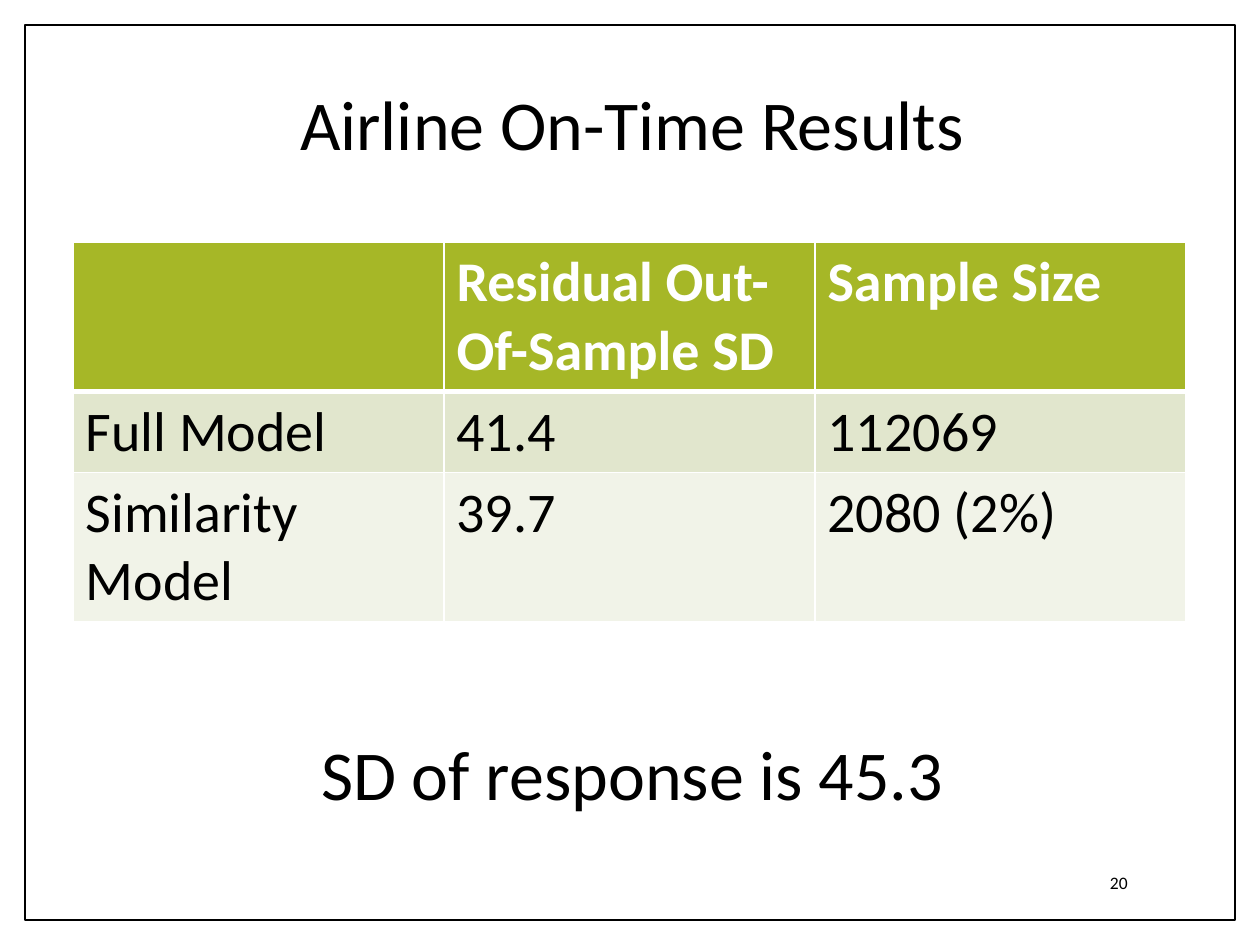
from lxml import etree
from pptx import Presentation
from pptx import util as u
from pptx.dml.color import RGBColor
from pptx.enum import shapes, text
from pptx.oxml.ns import qn

PX = 914400 / 126
FONT = "Calibri"
COLORS = {
    "white": "FFFFFF",
    "black": "000000",
    "header": "A6B727",
    "band_dark": "E1E6CD",
    "band_light": "F1F3E8",
}
RESULTS = [
    ["", "Residual Out-Of-Sample SD", "Sample Size"],
    ["Full Model", "41.4", "112069"],
    ["Similarity Model", "39.7", "2080 (2%)"],
]


def px(length):
    return u.Emu(round(length * PX))


def emu_box(box):
    return [px(length) for length in box]


def color(name):
    return RGBColor.from_string(COLORS[name])


def style(paragraph, size, color_name="black", bold=False):
    font = paragraph.font
    font.name, font.size, font.bold = FONT, u.Pt(size), bold
    font.color.rgb = color(color_name)


def add_frame(slide, box):
    frame = slide.shapes.add_shape(shapes.MSO_SHAPE.RECTANGLE, *emu_box(box))
    frame.shadow.inherit = False
    frame.fill.solid()
    frame.fill.fore_color.rgb = color("white")
    frame.line.color.rgb = color("black")
    frame.line.width = u.Pt(1)


def set_borders(cell, bottom_width):
    """Draw white cell borders; they must come before the fill in tcPr."""
    properties = cell._tc.get_or_add_tcPr()
    widths = {"lnL": 1, "lnR": 1, "lnT": 1, "lnB": bottom_width}
    for index, (side, width) in enumerate(widths.items()):
        line = etree.Element(qn(f"a:{side}"), w=str(u.Pt(width)))
        fill = etree.SubElement(line, qn("a:solidFill"))
        etree.SubElement(fill, qn("a:srgbClr"), val=COLORS["white"])
        properties.insert(index, line)


def add_results_table(slide, box):
    left, top, width, height = box
    row_heights = [149, 81, height - 149 - 81]
    fills = ["header", "band_dark", "band_light"]
    table = slide.shapes.add_table(len(RESULTS), len(RESULTS[0]), *emu_box(box)).table
    for column in table.columns:
        column.width = px(width / len(RESULTS[0]))
    for row_index, values in enumerate(RESULTS):
        is_header = row_index == 0
        table.rows[row_index].height = px(row_heights[row_index])
        for column_index, value in enumerate(values):
            cell = table.cell(row_index, column_index)
            cell.text = value
            cell.fill.solid()
            cell.fill.fore_color.rgb = color(fills[row_index])
            style(cell.text_frame.paragraphs[0], 32, "white" if is_header else "black", is_header)
            set_borders(cell, 3 if is_header else 1)


def add_page_number(slide, box, number):
    frame = slide.shapes.add_textbox(*emu_box(box)).text_frame
    frame.word_wrap = True
    frame.vertical_anchor = text.MSO_ANCHOR.MIDDLE
    paragraph = frame.paragraphs[0]
    paragraph.text = number
    paragraph.alignment = text.PP_ALIGN.RIGHT
    style(paragraph, 10)


def add_headline_and_note(slide, box, headline, note):
    """Place the headline above the table and the note below it in one text box."""
    frame = slide.shapes.add_textbox(*emu_box(box)).text_frame
    frame.word_wrap = True
    frame.text = f"{headline}\n{note}"
    for paragraph, space_before in zip(frame.paragraphs, (10, 328)):
        paragraph.alignment = text.PP_ALIGN.CENTER
        paragraph.line_spacing = 0.9
        paragraph.space_before = u.Pt(space_before)
        properties = paragraph._p.get_or_add_pPr()
        properties.set("marL", str(px(24)))
        properties.set("indent", str(px(-19)))
        style(paragraph, 40)


def main():
    presentation = Presentation()
    presentation.slide_width, presentation.slide_height = px(1260), px(945)
    slide = presentation.slides.add_slide(presentation.slide_layouts[6])
    add_frame(slide, (25, 25, 1210, 895))
    add_results_table(slide, (73, 242, 1113, 379))
    add_page_number(slide, (964, 858, 176, 50), "20")
    add_headline_and_note(
        slide, (73, 84, 1113, 788), "Airline On-Time Results", "SD of response is 45.3"
    )
    presentation.save("out.pptx")


if __name__ == "__main__":
    main()
